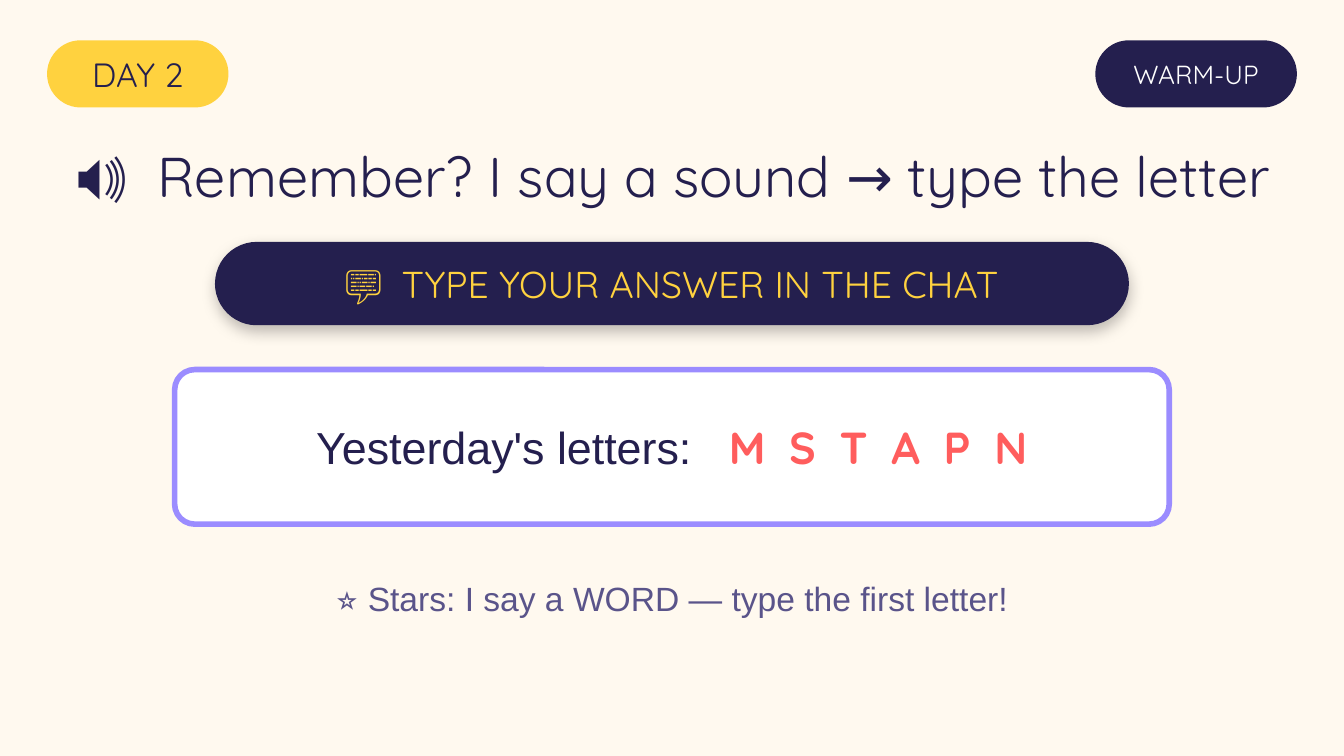
from dataclasses import dataclass
from typing import Optional

from lxml import etree
from pptx import Presentation
from pptx.dml.color import RGBColor
from pptx.enum.shapes import MSO_SHAPE
from pptx.enum.text import MSO_ANCHOR, MSO_AUTO_SIZE, PP_ALIGN
from pptx.oxml.ns import qn
from pptx.util import Inches, Pt

ROUNDED = MSO_SHAPE.ROUNDED_RECTANGLE
MIDDLE = MSO_ANCHOR.MIDDLE
CENTER = PP_ALIGN.CENTER
NO_AUTOFIT = MSO_AUTO_SIZE.NONE
TITLE_ONLY = 5

WIDTH, HEIGHT = 10, 5.625
COLUMNS = 200
CELL = WIDTH / COLUMNS  # square grid cell, in inches
MARGIN = 7


@dataclass(frozen=True)
class Theme:
    paper: str = "FFF9EF"
    ink: str = "241F4E"
    muted: str = "5A548A"
    yellow: str = "FFD23F"
    white: str = "FFFFFF"
    violet: str = "9B8CFF"
    coral: str = "FF5D5D"
    display: str = "Quicksand"
    body: str = "Arial"
    title: int = 30
    letters: int = 24
    prompt: int = 20
    label: int = 18
    tag: int = 14


THEME = Theme()


@dataclass(frozen=True)
class Run:
    """A stretch of text; tracking is extra space after each character, in points."""
    text: str
    size: int
    color: str
    font: str = THEME.display
    bold: bool = False
    tracking: float = 0


@dataclass(frozen=True)
class Box:
    """A place in grid cells; without a left edge it is centred on the slide."""
    top: float
    width: float
    height: float
    left: Optional[float] = None

    def lengths(self) -> dict:
        left = (COLUMNS - self.width) / 2 if self.left is None else self.left
        cells = {"left": left, "top": self.top,
                 "width": self.width, "height": self.height}
        return {name: Inches(n * CELL) for name, n in cells.items()}


@dataclass(frozen=True)
class Panel:
    box: Box
    fill: str
    runs: tuple[Run, ...]
    radius: float = 0.5
    border: Optional[str] = None
    raised: bool = False


PANELS = (
    Panel(Box(6, 27, 10, MARGIN), THEME.yellow,
          (Run("DAY 2", THEME.label, THEME.ink),)),
    Panel(Box(6, 30, 10, COLUMNS - MARGIN - 30), THEME.ink,
          (Run("WARM-UP", THEME.tag, THEME.white),)),
    Panel(Box(36, 136, 12.4), THEME.ink,
          (Run("💬 ", THEME.prompt, THEME.yellow, tracking=2.5),
           Run("TYPE YOUR ANSWER IN THE CHAT", THEME.prompt, THEME.yellow)),
          raised=True),
    Panel(Box(55, 148, 23), THEME.white,
          (Run("Yesterday's letters:", THEME.letters, THEME.ink, THEME.body),
           Run(" ", THEME.letters, THEME.ink, THEME.body, tracking=13.3),
           Run("M S T A P N", THEME.letters, THEME.coral, bold=True, tracking=3)),
          radius=0.13, border=THEME.violet),
)
TITLE_BOX = Box(19, COLUMNS, 14)
TITLE_RUNS = (
    Run("🔊 ", THEME.title, THEME.ink, tracking=4),
    Run("Remember? I say a sound → type the letter", THEME.title, THEME.ink),
)
HINT_BOX = Box(84, COLUMNS, 10)
HINT_RUNS = (Run("⭐ Stars: I say a WORD — type the first letter!",
                 THEME.label, THEME.muted, THEME.body),)


def rgb(color: str) -> RGBColor:
    return RGBColor.from_string(color)


def write(sp, runs: tuple[Run, ...]) -> None:
    tf = sp.text_frame
    frame = {"word_wrap": True, "auto_size": NO_AUTOFIT, "vertical_anchor": MIDDLE}
    for name, value in frame.items():
        setattr(tf, name, value)
    p = tf.paragraphs[0]
    p.alignment = CENTER
    for run in runs:
        r = p.add_run()
        r.text = run.text
        formats = {"name": run.font, "size": Pt(run.size), "bold": run.bold}
        for name, value in formats.items():
            setattr(r.font, name, value)
        r.font.color.rgb = rgb(run.color)
        if run.tracking:
            r.font._element.set("spc", str(round(run.tracking * 100)))


def add_soft_shadow(sp) -> None:
    effects = sp._element.spPr.find(qn("a:effectLst"))
    shadow = etree.SubElement(effects, qn("a:outerShdw"), blurRad=str(Pt(8)),
                              dist=str(Pt(3)), dir="5400000", rotWithShape="0")
    color = etree.SubElement(shadow, qn("a:srgbClr"), val="000000")
    etree.SubElement(color, qn("a:alpha"), val="25000")


def add_panel(s, panel: Panel) -> None:
    sp = s.shapes.add_shape(ROUNDED, **panel.box.lengths())
    sp.adjustments[0] = panel.radius
    sp.fill.solid()
    sp.fill.fore_color.rgb = rgb(panel.fill)
    sp.shadow.inherit = False
    if panel.raised:
        add_soft_shadow(sp)
    if panel.border:
        sp.line.color.rgb = rgb(panel.border)
        sp.line.width = Pt(3)
    else:
        sp.line.fill.background()
    for side in ("left", "top", "right", "bottom"):
        setattr(sp.text_frame, f"margin_{side}", 0)
    write(sp, panel.runs)


def set_title(s) -> None:
    sp = s.shapes.title
    for name, value in TITLE_BOX.lengths().items():
        setattr(sp, name, value)
    write(sp, TITLE_RUNS)


def main() -> None:
    prs = Presentation()
    prs.slide_width, prs.slide_height = Inches(WIDTH), Inches(HEIGHT)
    s = prs.slides.add_slide(prs.slide_layouts[TITLE_ONLY])
    s.background.fill.solid()
    s.background.fill.fore_color.rgb = rgb(THEME.paper)
    set_title(s)
    for panel in PANELS:
        add_panel(s, panel)
    write(s.shapes.add_textbox(**HINT_BOX.lengths()), HINT_RUNS)
    prs.save("out.pptx")


if __name__ == "__main__":
    main()
